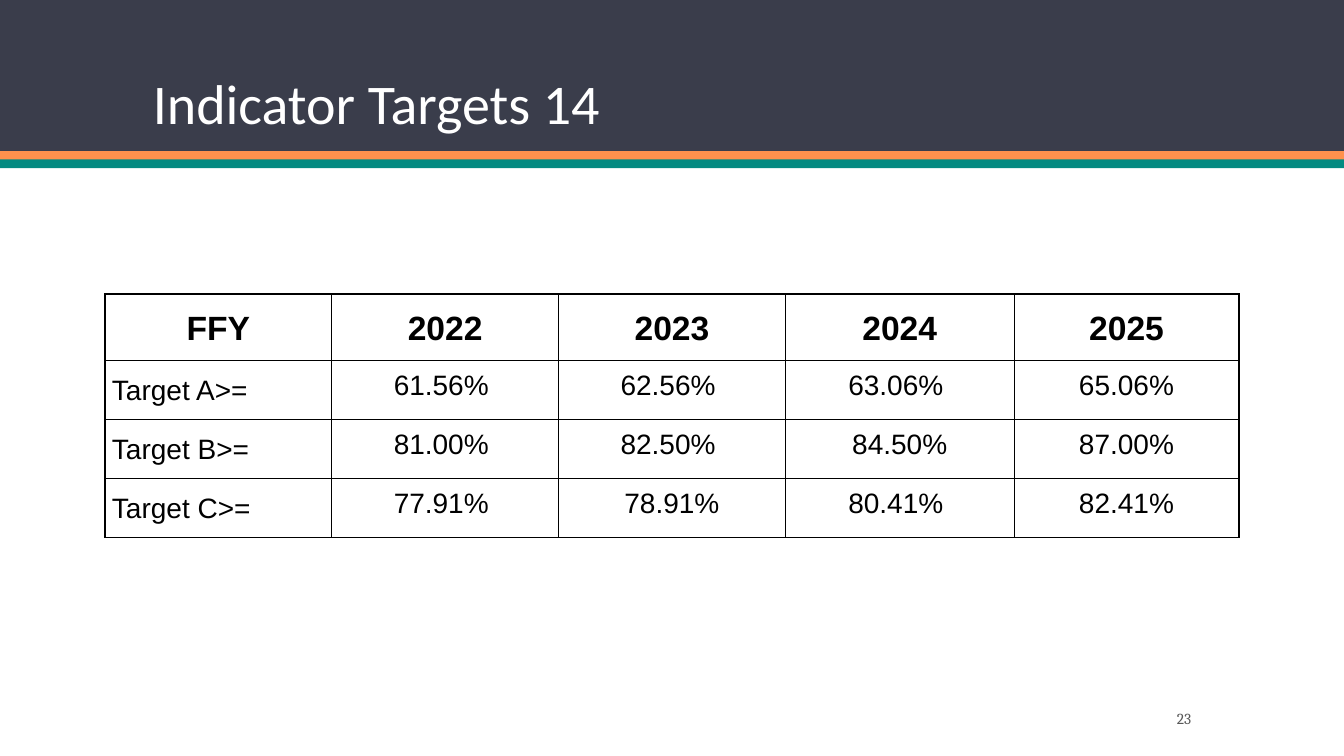
"""Build the Indicator Targets 14 slide with its table of yearly targets."""
from lxml.etree import SubElement
from pptx import Presentation
from pptx.dml.color import RGBColor
from pptx.enum.shapes import MSO_SHAPE
from pptx.enum.text import MSO_ANCHOR, MSO_AUTO_SIZE, PP_ALIGN
from pptx.oxml.ns import qn
from pptx.util import Pt

SLATE = RGBColor(0x3A, 0x3D, 0x4B)
ORANGE = RGBColor(0xFF, 0x91, 0x4D)
TEAL = RGBColor(0x04, 0x8A, 0x81)
WHITE = RGBColor(0xFF, 0xFF, 0xFF)
GREY = RGBColor(0x59, 0x59, 0x59)
BLACK = RGBColor(0x00, 0x00, 0x00)

BANDS = [(0, 108, SLATE), (108, 6.3, ORANGE), (113.8, 6.3, TEAL)]
COLUMN_WIDTHS = [162, 162, 162, 163.4, 160.6]
ROW_HEIGHTS = [45, 40, 40, 40]
TARGETS = [
    ["FFY", "2022", "2023", "2024", "2025"],
    ["Target A>=", "61.56% ", "62.56% ", "63.06% ", "65.06%"],
    ["Target B>=", "81.00% ", "82.50% ", "84.50%", "87.00%"],
    ["Target C>=", "77.91% ", " 78.91% ", "80.41% ", "82.41%"],
]


def format_text(paragraph, size, font_name, color, alignment, bold=False):
    paragraph.alignment = alignment
    font = paragraph.runs[0].font
    font.size = Pt(size)
    font.name = font_name
    font.color.rgb = color
    font.bold = bold


def add_borders(cell):
    properties = cell._tc.get_or_add_tcPr()
    for position, side in enumerate(("a:lnL", "a:lnR", "a:lnT", "a:lnB")):
        line = SubElement(properties, qn(side), w=str(Pt(1)))
        fill = SubElement(line, qn("a:solidFill"))
        SubElement(fill, qn("a:srgbClr"), val=str(BLACK))
        properties.insert(position, line)


presentation = Presentation()
presentation.slide_width = Pt(960)
presentation.slide_height = Pt(540)
slide = presentation.slides.add_slide(presentation.slide_layouts[5])

title = slide.shapes.title
title.left, title.top, title.width, title.height = Pt(102), Pt(20), Pt(756), Pt(81.5)
title.text_frame.text = "Indicator Targets 14"
title.text_frame.vertical_anchor = MSO_ANCHOR.BOTTOM
title.text_frame.auto_size = MSO_AUTO_SIZE.NONE
title.text_frame.paragraphs[0].line_spacing = 0.9
format_text(title.text_frame.paragraphs[0], 40, "Calibri", WHITE, PP_ALIGN.LEFT)

for top, height, color in BANDS:
    band = slide.shapes.add_shape(MSO_SHAPE.RECTANGLE, 0, Pt(top), Pt(960), Pt(height))
    band.fill.solid()
    band.fill.fore_color.rgb = color
    band.line.fill.background()
    band.shadow.inherit = False
    title.element.addprevious(band.element)

page_number = slide.shapes.add_textbox(Pt(750), Pt(502), Pt(108), Pt(21.6))
page_number.text_frame.word_wrap = True
page_number.text_frame.vertical_anchor = MSO_ANCHOR.MIDDLE
page_number.text_frame.text = "23"
format_text(page_number.text_frame.paragraphs[0], 11, "Cambria", GREY, PP_ALIGN.RIGHT)

table = slide.shapes.add_table(
    len(TARGETS), len(COLUMN_WIDTHS), Pt(75), Pt(210), Pt(sum(COLUMN_WIDTHS)), Pt(sum(ROW_HEIGHTS))
).table
table.horz_banding = False
for column, width in zip(table.columns, COLUMN_WIDTHS):
    column.width = Pt(width)
for row_index, (row, height, values) in enumerate(zip(table.rows, ROW_HEIGHTS, TARGETS)):
    row.height = Pt(height)
    is_header = row_index == 0
    for column_index, (cell, value) in enumerate(zip(row.cells, values)):
        is_label = column_index == 0 and not is_header
        cell.margin_left = cell.margin_right = Pt(5)
        cell.margin_top = cell.margin_bottom = Pt(7.2)
        cell.fill.background()
        add_borders(cell)
        cell.text_frame.text = value
        paragraph = cell.text_frame.paragraphs[0]
        paragraph.line_spacing = 1.15 if is_header or is_label else 1.0
        alignment = PP_ALIGN.LEFT if is_label else PP_ALIGN.CENTER
        format_text(paragraph, 24 if is_header else 20, "Arial", BLACK, alignment, is_header)

presentation.save("out.pptx")
